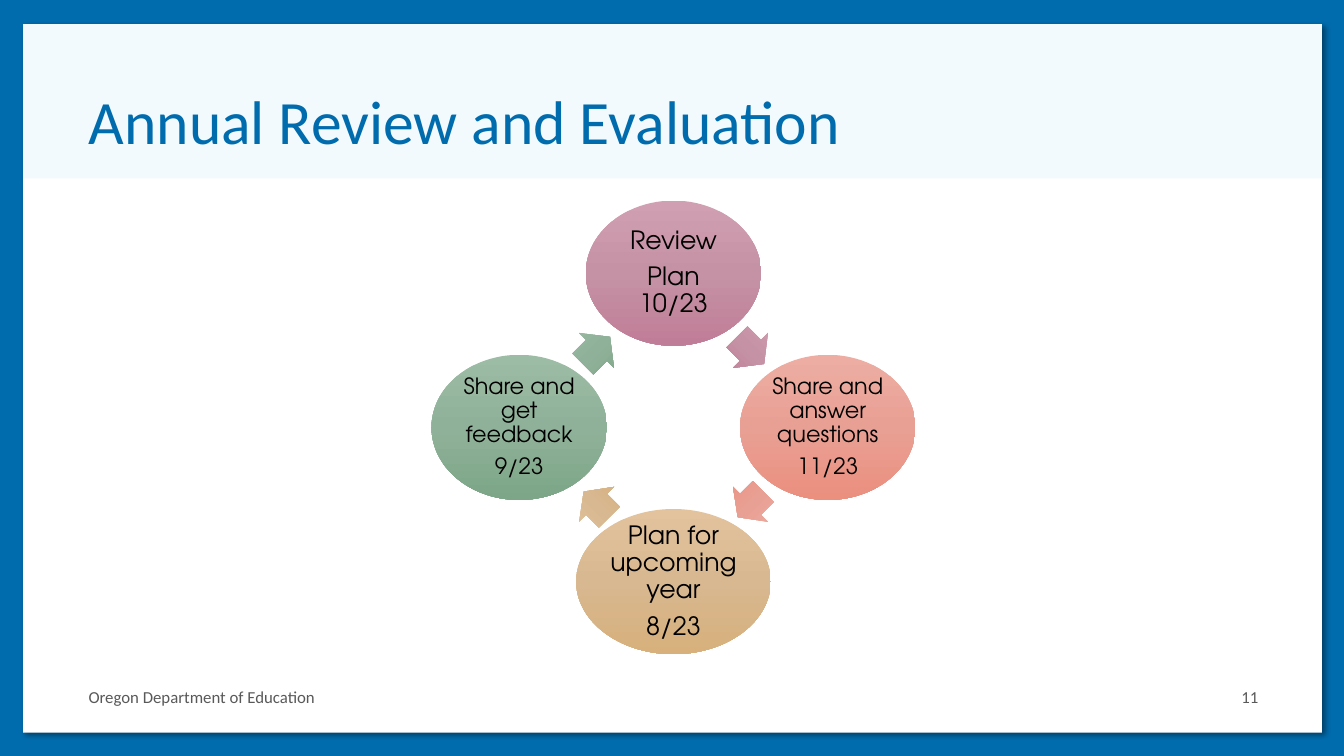
from copy import deepcopy
from dataclasses import dataclass
from math import cos, radians, sin

from lxml import etree
from pptx import Presentation
from pptx.dml.color import RGBColor
from pptx.enum import shapes, text
from pptx.oxml import ns
from pptx.util import Inches, Pt


@dataclass(frozen=True)
class Theme:
    blue: str = "006CAD"
    white: str = "FFFFFF"
    pale: str = "F2FAFE"
    black: str = "000000"
    grey: str = "595959"
    heading_font: str = "Calibri"
    cycle_font: str = "TeX Gyre Adventor"
    title_size: int = 44
    footer_size: int = 12


@dataclass(frozen=True)
class Stage:
    wording: str
    size: int
    colours: tuple[str, str, str]
    width: float
    arrow_length: float


THEME = Theme()
CENTRE_X, CENTRE_Y = 6.68, 4.24
STAGE_RADIUS, ARROW_RADIUS = 1.53, 1.08
STAGE_HEIGHT, ARROW_HEIGHT = 1.44, 0.49

# Clockwise from the top
STAGES = (
    Stage("Review\nPlan 10/23", 18, ("D09FB1", "C592A5", "C07D97"), 1.74, 0.38),
    Stage("Share and answer questions\n11/23", 16, ("EDADA2", "E9A094", "EB8F7F"), 1.74, 0.36),
    Stage("Plan for upcoming year\n8/23", 18, ("E2C39D", "D8B890", "D7B07C"), 1.93, 0.36),
    Stage("Share and get feedback\n9/23", 16, ("9DBCA5", "90B199", "7CA687"), 1.74, 0.38),
)


def add_plain_shape(slide, preset, left: float, top: float, width: float, height: float):
    shape = slide.shapes.add_shape(
        preset, Inches(left), Inches(top), Inches(width), Inches(height))
    shape.shadow.inherit = False
    shape.line.fill.background()
    return shape


def add_panel(slide, height: float, colour: str):
    panel = add_plain_shape(slide, shapes.MSO_SHAPE.RECTANGLE, 0.23, 0.24, 12.88, height)
    panel.fill.solid()
    panel.fill.fore_color.rgb = RGBColor.from_string(colour)
    return panel


def add_shadow(shape) -> None:
    effects = shape._element.spPr.find(ns.qn("a:effectLst"))
    shadow = etree.SubElement(
        effects, ns.qn("a:outerShdw"), blurRad=str(Pt(4)), dist=str(Pt(3)),
        dir="2700000", algn="tl", rotWithShape="0")
    colour = etree.SubElement(shadow, ns.qn("a:srgbClr"), val=THEME.black)
    etree.SubElement(colour, ns.qn("a:alpha"), val="40000")


def fill_gradient(shape, colours: tuple[str, str, str]) -> None:
    shape.fill.gradient()
    shape.fill.gradient_angle = 270
    stop_list = shape._element.spPr.find(".//" + ns.qn("a:gsLst"))
    stop_list.insert(1, deepcopy(stop_list[0]))
    for stop, colour, position in zip(shape.fill.gradient_stops, colours, (0, 0.5, 1)):
        stop.color.rgb = RGBColor.from_string(colour)
        stop.position = position


def write(shape, wording: str, size: int, font: str, colour: str, align, anchor) -> None:
    frame = shape.text_frame
    frame.text = wording
    frame.word_wrap = True
    frame.auto_size = text.MSO_AUTO_SIZE.NONE
    frame.vertical_anchor = anchor
    for paragraph in frame.paragraphs:
        paragraph.alignment = align
        for run in paragraph.runs:
            run.font.size = Pt(size)
            run.font.name = font
            run.font.color.rgb = RGBColor.from_string(colour)


def orbit(radius: float, degrees: float) -> tuple[float, float]:
    """Point at a clockwise angle from the top of the cycle."""
    angle = radians(degrees)
    return CENTRE_X + radius * sin(angle), CENTRE_Y - radius * cos(angle)


def add_stage(slide, stage: Stage, degrees: float) -> None:
    x, y = orbit(STAGE_RADIUS, degrees)
    oval = add_plain_shape(slide, shapes.MSO_SHAPE.OVAL, x - stage.width / 2,
                           y - STAGE_HEIGHT / 2, stage.width, STAGE_HEIGHT)
    fill_gradient(oval, stage.colours)
    write(oval, stage.wording, stage.size, THEME.cycle_font, THEME.black,
          text.PP_ALIGN.CENTER, text.MSO_ANCHOR.MIDDLE)
    frame = oval.text_frame
    frame.margin_left = frame.margin_right = Inches(0.02)
    frame.margin_top = frame.margin_bottom = Inches(0.02)
    for paragraph in frame.paragraphs:
        paragraph.line_spacing = 0.9
        paragraph.space_after = Pt(0.35 * stage.size)


def add_stage_arrow(slide, stage: Stage, degrees: float) -> None:
    x, y = orbit(ARROW_RADIUS, degrees)
    arrow = add_plain_shape(slide, shapes.MSO_SHAPE.RIGHT_ARROW, x - stage.arrow_length / 2,
                            y - ARROW_HEIGHT / 2, stage.arrow_length, ARROW_HEIGHT)
    arrow.adjustments[0] = 0.6
    arrow.adjustments[1] = 0.5
    arrow.rotation = degrees
    fill_gradient(arrow, stage.colours)


def add_footer(slide, left: float, width: float, wording: str, align) -> None:
    footer = slide.shapes.add_textbox(Inches(left), Inches(6.71), Inches(width), Inches(0.4))
    write(footer, wording, THEME.footer_size, THEME.heading_font, THEME.grey,
          align, text.MSO_ANCHOR.MIDDLE)


def main() -> None:
    deck = Presentation()
    deck.slide_width, deck.slide_height = Inches(13.33), Inches(7.5)
    slide = deck.slides.add_slide(deck.slide_layouts.get_by_name("Title Only"))

    # Blue frame, white page and pale title band
    slide.background.fill.solid()
    slide.background.fill.fore_color.rgb = RGBColor.from_string(THEME.blue)
    add_shadow(add_panel(slide, 7.03, THEME.white))
    add_panel(slide, 1.53, THEME.pale)

    # Title, brought in front of its band
    title = slide.shapes.title
    title.left, title.top = Inches(0.78), Inches(0.5)
    title.width, title.height = Inches(11.79), Inches(1.12)
    write(title, "Annual Review and Evaluation", THEME.title_size, THEME.heading_font,
          THEME.blue, text.PP_ALIGN.LEFT, text.MSO_ANCHOR.BOTTOM)
    title.text_frame.paragraphs[0].line_spacing = 0.9
    slide.shapes._spTree.append(title._element)

    # Review cycle
    step = 360 / len(STAGES)
    for index, stage in enumerate(STAGES):
        add_stage(slide, stage, index * step)
        add_stage_arrow(slide, stage, (index + 0.5) * step)

    # Footer
    add_footer(slide, 0.78, 3.13, "Oregon Department of Education", text.PP_ALIGN.LEFT)
    add_footer(slide, 9.42, 3.16, "11", text.PP_ALIGN.RIGHT)

    deck.save("out.pptx")


if __name__ == "__main__":
    main()
